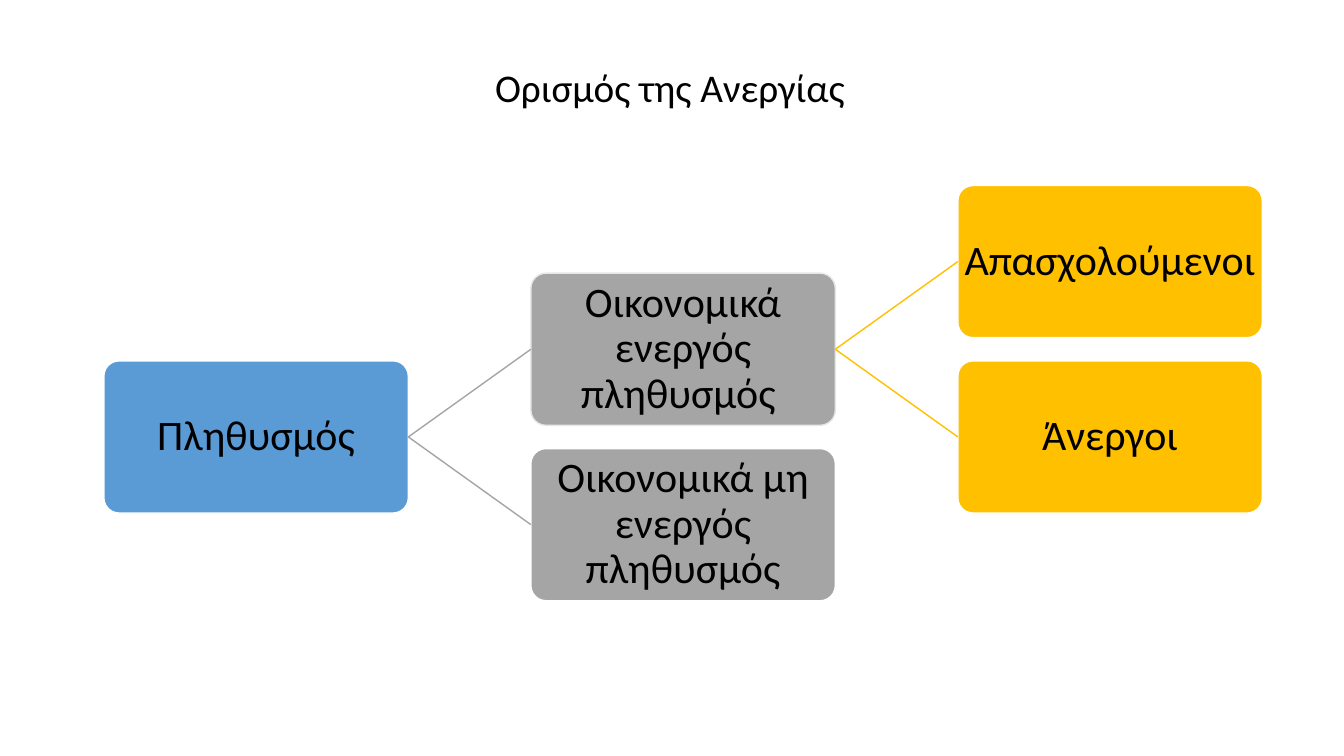
"""Build a slide that defines unemployment with a tree of population groups."""
from lxml.etree import SubElement
from pptx import Presentation
from pptx.dml.color import RGBColor
from pptx.enum.shapes import MSO_CONNECTOR, MSO_SHAPE
from pptx.enum.text import MSO_ANCHOR, PP_ALIGN
from pptx.oxml.ns import qn
from pptx.util import Emu, Pt

TITLE = "Ορισμός της Ανεργίας"
COLORS = {
    "population": "5B9BD5",
    "activity": "A5A5A5",
    "employment": "FFC000",
    "outline": "FFFFFF",
    "active outline": "E7E7E7",
    "text": "000000",
}
LEVELS = ["population", "activity", "employment"]
# name: (text, level, half-row, parent, outline)
GROUPS = {
    "all": ("Πληθυσμός", 0, 2, None, "outline"),
    "active": ("Οικονομικά ενεργός πληθυσμός ", 1, 1, "all", "active outline"),
    "employed": ("Απασχολούμενοι", 2, 0, "active", "outline"),
    "unemployed": ("Άνεργοι", 2, 2, "active", "outline"),
    "inactive": ("Οικονομικά μη ενεργός πληθυσμός", 1, 3, "all", "outline"),
}
FONT = "Calibri"
SLIDE_SIZE = (1333, 750)
TITLE_AREA = (481, 58, 379, 57)
TREE_LEFT, TREE_TOP = 103, 184
BOX_WIDTH, BOX_HEIGHT = 302, 151
LEVEL_STEP, HALF_ROW_STEP = 423.5, 87
BOX_INSET = 2


def px(length):
    return Emu(round(length * 9144))


def color(name):
    return RGBColor.from_string(COLORS[name])


def add_text(para, text, size):
    span = para.add_run()
    span.text = text
    span.font.name = FONT
    span.font.size = Pt(size)
    span.font.color.rgb = color("text")


def add_title(page):
    title = page.shapes.title
    title.left, title.top, title.width, title.height = map(px, TITLE_AREA)
    frame = title.text_frame
    frame.word_wrap = False
    frame.vertical_anchor = MSO_ANCHOR.TOP
    para = frame.paragraphs[0]
    para.alignment = PP_ALIGN.LEFT
    add_text(para, TITLE, 28)


def add_group(page, text, level, half_row, outline):
    left = TREE_LEFT + level * LEVEL_STEP
    top = TREE_TOP + half_row * HALF_ROW_STEP
    box = page.shapes.add_shape(
        MSO_SHAPE.ROUNDED_RECTANGLE, px(left), px(top), px(BOX_WIDTH), px(BOX_HEIGHT)
    )
    box.adjustments[0] = 0.1
    box.shadow.inherit = False
    box.fill.solid()
    box.fill.fore_color.rgb = color(LEVELS[level])
    box.line.color.rgb = color(outline)
    box.line.width = Pt(1)
    frame = box.text_frame
    frame.word_wrap = True
    frame.vertical_anchor = MSO_ANCHOR.MIDDLE
    frame.margin_left = frame.margin_right = px(BOX_INSET)
    frame.margin_top = frame.margin_bottom = px(BOX_INSET)
    para = frame.paragraphs[0]
    para.alignment = PP_ALIGN.CENTER
    para.line_spacing = 0.9
    add_text(para, text, 30)
    return box


def add_branch(page, parent, child, level):
    branch = page.shapes.add_connector(MSO_CONNECTOR.STRAIGHT, 0, 0, 0, 0)
    branch.begin_connect(parent, 3)
    branch.end_connect(child, 1)
    branch.line.color.rgb = color(LEVELS[level])
    branch.line.width = Pt(1)
    SubElement(branch._element.spPr, qn("a:effectLst"))


def main():
    deck = Presentation()
    deck.slide_width, deck.slide_height = map(px, SLIDE_SIZE)
    page = deck.slides.add_slide(deck.slide_layouts[5])
    add_title(page)
    boxes = {}
    for name, (text, level, half_row, parent, outline) in GROUPS.items():
        boxes[name] = add_group(page, text, level, half_row, outline)
        if parent:
            add_branch(page, boxes[parent], boxes[name], level)
    deck.save("out.pptx")


if __name__ == "__main__":
    main()
